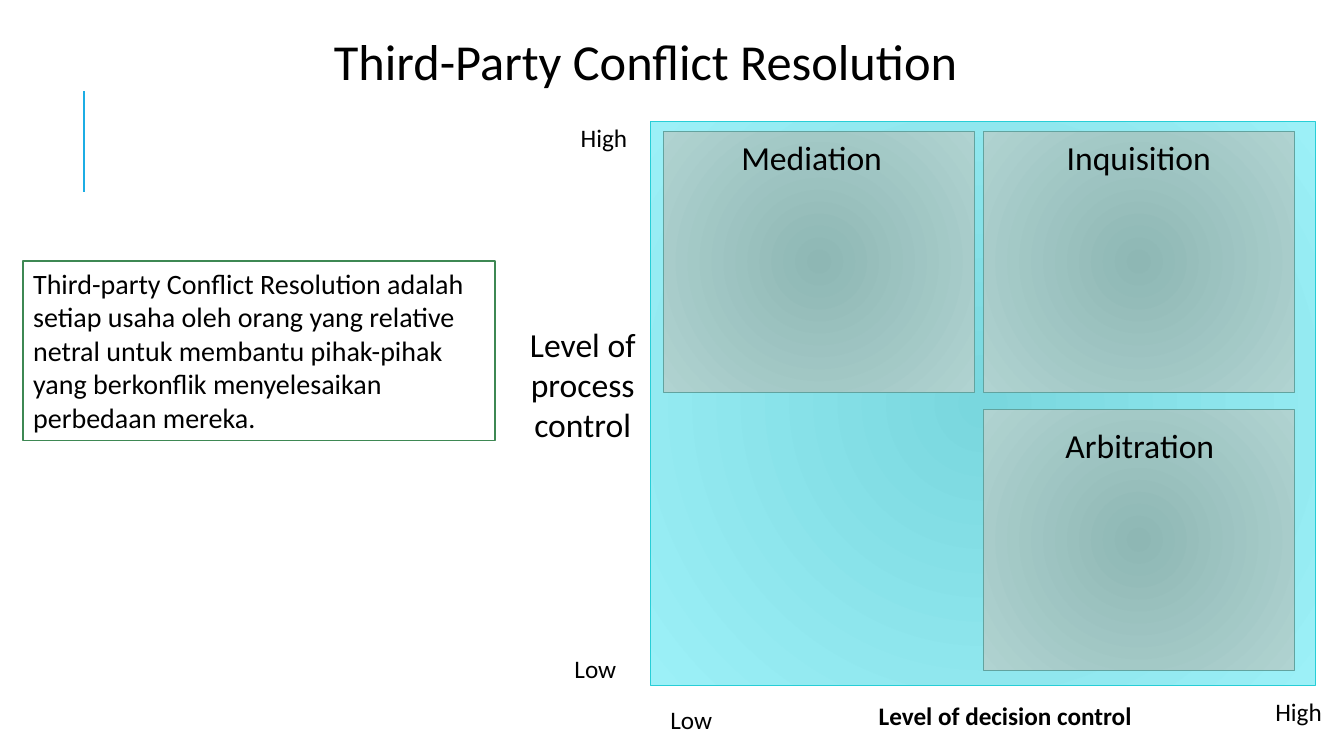
from pptx import Presentation
from pptx.dml.color import RGBColor
from pptx.enum.shapes import MSO_CONNECTOR, MSO_SHAPE
from pptx.enum.text import MSO_ANCHOR, MSO_AUTO_SIZE, PP_ALIGN
from pptx.oxml import parse_xml
from pptx.oxml.ns import qn
from pptx.util import Inches, Pt

RECTANGLE, STRAIGHT = MSO_SHAPE.RECTANGLE, MSO_CONNECTOR.STRAIGHT
LEFT, CENTER = PP_ALIGN.LEFT, PP_ALIGN.CENTER
TOP, MIDDLE = MSO_ANCHOR.TOP, MSO_ANCHOR.MIDDLE
NO_RESIZE = MSO_AUTO_SIZE.NONE
NS = 'xmlns:a="http://schemas.openxmlformats.org/drawingml/2006/main"'

# Content
TITLE = "Third-Party Conflict Resolution"
DEFINITION = (
    "Third-party Conflict Resolution adalah setiap usaha oleh orang yang "
    "relative netral untuk membantu pihak-pihak yang berkonflik "
    "menyelesaikan perbedaan mereka."
)
# Method, column, row, label box (left, top, width, height)
METHODS = [
    ("Mediation", 0, 0, (6.51, 1.31, 3.08, 0.5)),
    ("Inquisition", 1, 0, (9.98, 1.31, 2.63, 0.5)),
    ("Arbitration", 1, 1, (9.8, 4.17, 3.01, 0.5)),
]
# Label, box, size, alignment, bold
AXIS_LABELS = [
    ("High", (5.66, 1.16, 1.59, 0.4), 18, LEFT, False),
    ("Level of process control", (4.91, 3.16, 1.74, 1.31), 24, CENTER, False),
    ("Low", (5.3, 6.43, 1.21, 0.4), 18, CENTER, False),
    ("Low", (6.55, 6.94, 1.39, 0.4), 18, LEFT, False),
    ("Level of decision control", (7.4, 6.9, 5.14, 0.4), 18, CENTER, True),
    ("High", (12.55, 6.86, 1.01, 0.4), 18, LEFT, False),
]

# Matrix layout
MATRIX = (6.45, 1.21, 6.6, 5.59)
GRID_LEFT, GRID_TOP = 6.58, 1.3
CELL_WIDTH, CELL_HEIGHT = 3.09, 2.59
COLUMN_GAP, ROW_GAP = 0.08, 0.17


def color(value):
    return RGBColor.from_string(value)


def inches(box):
    return [Inches(length) for length in box]


def write(shape, text, size, align=LEFT, bold=False, anchor=TOP):
    frame = shape.text_frame
    frame.word_wrap = True
    frame.auto_size = NO_RESIZE
    frame.vertical_anchor = anchor
    paragraph = frame.paragraphs[0]
    paragraph.text = text
    paragraph.alignment = align
    paragraph.font.name = "Calibri"
    paragraph.font.size = Pt(size)
    paragraph.font.bold = bold
    paragraph.font.color.rgb = color("000000")


def add_panel(box, line, width):
    panel = slide.shapes.add_shape(RECTANGLE, *inches(box))
    panel.shadow.inherit = False
    panel.line.color.rgb = color(line)
    panel.line.width = Pt(width)
    return panel


def radial_fill(panel, inner, outer):
    panel.fill.gradient()
    for stop, value in zip(panel.fill.gradient_stops, (inner, outer)):
        stop.color.rgb = color(value)
    gradient = panel._element.spPr.find(qn("a:gradFill"))
    gradient.replace(gradient.find(qn("a:lin")), parse_xml(
        f'<a:path {NS} path="circle"><a:fillToRect l="100000" t="100000" '
        'r="100000" b="100000"/></a:path>'))


def add_label(text, box, size, align, bold=False):
    label = slide.shapes.add_textbox(*inches(box))
    write(label, text, size, align, bold)


prs = Presentation()
prs.slide_width, prs.slide_height = Inches(13.33), Inches(7.5)
slide = prs.slides.add_slide(prs.slide_layouts[5])

# Title
title = slide.shapes.title
title.left, title.top, title.width, title.height = inches((2.73, 0.24, 7.35, 0.71))
write(title, TITLE, 36, CENTER, anchor=MIDDLE)

# Accent line
accent = slide.shapes.add_connector(STRAIGHT, *inches((0.83, 1.9, 0.83, 0.9)))
accent.line.color.rgb = color("1CADE4")
accent.line.width = Pt(1.5)
accent._element.spPr.append(parse_xml(f"<a:effectLst {NS}/>"))

# Matrix and its methods
radial_fill(add_panel(MATRIX, "27CED7", 0.75), "79D7DE", "9CF0F7")
for method, column, row, label_box in METHODS:
    left = GRID_LEFT + column * (CELL_WIDTH + COLUMN_GAP)
    top = GRID_TOP + row * (CELL_HEIGHT + ROW_GAP)
    cell = add_panel((left, top, CELL_WIDTH, CELL_HEIGHT), "62A39F", 0.75)
    radial_fill(cell, "8EB7B4", "B0D3D1")
    add_label(method, label_box, 24, CENTER)

# Axis labels
for axis_label in AXIS_LABELS:
    add_label(*axis_label)

# Definition
definition = add_panel((0.23, 2.59, 4.68, 1.78), "3E8853", 1.25)
definition.fill.solid()
definition.fill.fore_color.rgb = color("FFFFFF")
write(definition, DEFINITION, 20)

prs.save("out.pptx")
